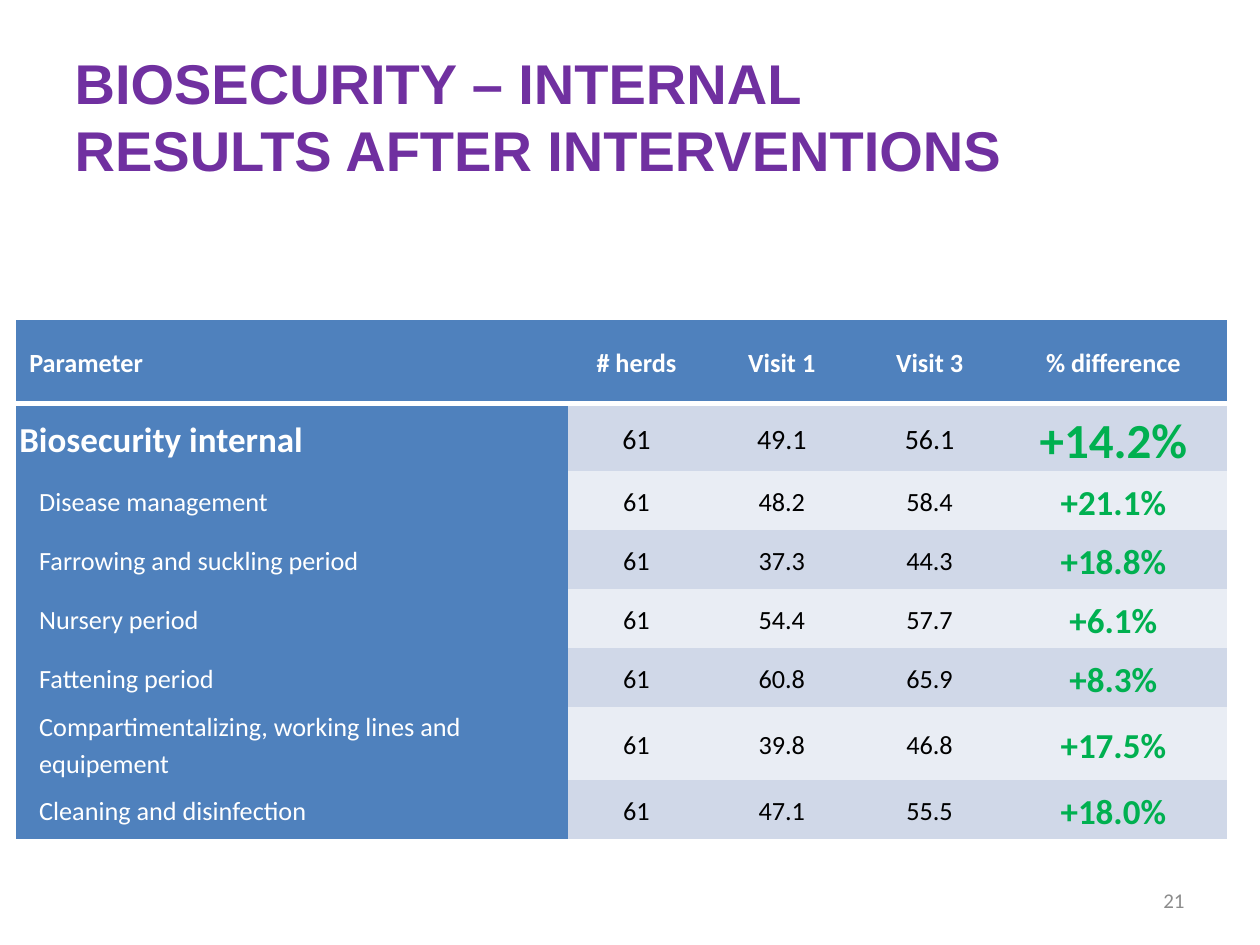
from lxml import etree
from pptx import Presentation
from pptx.dml.color import RGBColor
from pptx.enum.text import MSO_ANCHOR, PP_ALIGN
from pptx.oxml.ns import qn
from pptx.util import Cm, Pt

LEFT, CENTER, RIGHT = PP_ALIGN.LEFT, PP_ALIGN.CENTER, PP_ALIGN.RIGHT
MIDDLE = MSO_ANCHOR.MIDDLE

WHITE = RGBColor(0xFF, 0xFF, 0xFF)
BLACK = RGBColor(0x00, 0x00, 0x00)
GREY = RGBColor(0x8C, 0x8C, 0x8C)
PURPLE = RGBColor(0x70, 0x30, 0xA0)
GREEN = RGBColor(0x00, 0xB0, 0x50)
BLUE = RGBColor(0x4F, 0x81, 0xBD)
BAND_DARK = RGBColor(0xD0, 0xD8, 0xE8)
BAND_LIGHT = RGBColor(0xE9, 0xED, 0xF4)

NO_STYLE_NO_GRID = "{2D5ABB26-0587-4C30-8999-92F81FD0307C}"
TITLE_LAYOUT = 5

TITLE_LINES = ["BIOSECURITY – INTERNAL", "RESULTS AFTER INTERVENTIONS"]
HEADER = ["Parameter", "# herds", "Visit 1", "Visit 3", "% difference"]
TOTAL = ["Biosecurity internal", "61", "49.1", "56.1", "+14.2%"]
DETAILS = [
    ["Disease management", "61", "48.2", "58.4", "+21.1%"],
    ["Farrowing and suckling period", "61", "37.3", "44.3", "+18.8%"],
    ["Nursery period", "61", "54.4", "57.7", "+6.1%"],
    ["Fattening period", "61", "60.8", "65.9", "+8.3%"],
    ["Compartimentalizing, working lines and equipement", "61", "39.8", "46.8", "+17.5%"],
    ["Cleaning and disinfection", "61", "47.1", "55.5", "+18.0%"],
]
TWO_LINE_LABEL = DETAILS[4][0]

COLUMN_WIDTHS = [11.15, 2.74, 3.12, 2.84, 4.57]
HEADER_HEIGHT, ROW_HEIGHT = 1.7, 1.19


def add_run(paragraph, text, size, color, bold=False, font="Calibri"):
    run = paragraph.add_run()
    run.text = text
    run.font.name = font
    run.font.size = Pt(size)
    run.font.bold = bold
    run.font.color.rgb = color


def place(shape, left, top, width, height):
    shape.left, shape.top = Cm(left), Cm(top)
    shape.width, shape.height = Cm(width), Cm(height)


def add_title(slide, left, top, width, height):
    title = slide.shapes.title
    place(title, left, top, width, height)
    frame = title.text_frame
    frame.vertical_anchor = MIDDLE
    for index, line in enumerate(TITLE_LINES):
        paragraph = frame.add_paragraph() if index else frame.paragraphs[0]
        paragraph.alignment = LEFT
        add_run(paragraph, line, 32, PURPLE, bold=True, font="Arial")


def add_border(cell, side, width):
    """Draw a white line on one side: L, T or B, called in that order and before the fill."""
    properties = cell._tc.get_or_add_tcPr()
    line = etree.SubElement(properties, qn(f"a:ln{side}"), w=str(Pt(width)))
    fill = etree.SubElement(line, qn("a:solidFill"))
    etree.SubElement(fill, qn("a:srgbClr"), val=str(WHITE))


def cell_style(row, column):
    """Return text size, colour, bold and left indent in cm for a table position."""
    if row == 0:
        return 15, WHITE, True, 0.0 if column else 0.2
    is_total = row == 1
    if column == 0:
        return (20, WHITE, True, 0.0) if is_total else (15, WHITE, False, 0.4)
    if column == len(HEADER) - 1:
        return 28 if is_total else 20, GREEN, True, 0.0
    return 16 if is_total else 15, BLACK, False, 0.0


def fill_cell(cell, row, column, text):
    cell.margin_left = cell.margin_right = Cm(0.08)
    cell.margin_top = cell.margin_bottom = 0
    cell.vertical_anchor = MIDDLE
    if column == 0:
        add_border(cell, "L", 1)
    if row == 0:
        add_border(cell, "T", 1)
        add_border(cell, "B", 3)
    cell.fill.solid()
    band = BAND_DARK if row % 2 else BAND_LIGHT
    cell.fill.fore_color.rgb = BLUE if row == 0 or column == 0 else band

    size, color, bold, indent = cell_style(row, column)
    paragraph = cell.text_frame.paragraphs[0]
    paragraph.alignment = CENTER if column else LEFT
    paragraph.line_spacing = 1.15
    paragraph.space_before = Pt(0 if text == TWO_LINE_LABEL else 10)
    paragraph._p.get_or_add_pPr().set("marL", str(Cm(indent)))
    add_run(paragraph, text, size, color, bold)


def add_results_table(slide, left, top):
    rows = [HEADER, TOTAL, *DETAILS]
    heights = [HEADER_HEIGHT] + [ROW_HEIGHT] * (len(rows) - 1)
    frame = slide.shapes.add_table(
        len(rows), len(HEADER), Cm(left), Cm(top),
        Cm(sum(COLUMN_WIDTHS)), Cm(sum(heights)))
    table = frame.table
    table._tbl.tblPr.find(qn("a:tableStyleId")).text = NO_STYLE_NO_GRID
    for column, width in zip(table.columns, COLUMN_WIDTHS):
        column.width = Cm(width)
    for row, height in zip(table.rows, heights):
        row.height = Cm(height)
    for row, texts in enumerate(rows):
        for column, text in enumerate(texts):
            fill_cell(table.cell(row, column), row, column, text)


def add_page_number(slide, left, top, width, height):
    box = slide.shapes.add_textbox(Cm(left), Cm(top), Cm(width), Cm(height))
    box.text_frame.word_wrap = True
    box.text_frame.vertical_anchor = MIDDLE
    paragraph = box.text_frame.paragraphs[0]
    paragraph.alignment = RIGHT
    add_run(paragraph, "21", 12, GREY)


def main():
    presentation = Presentation()
    presentation.slide_width, presentation.slide_height = Cm(25.4), Cm(19.05)
    slide = presentation.slides.add_slide(presentation.slide_layouts[TITLE_LAYOUT])
    add_page_number(slide, 18.2, 17.65, 5.93, 1.01)
    add_results_table(slide, 0.31, 6.43)
    add_title(slide, 1.25, 0.75, 22.86, 3.15)
    presentation.save("out.pptx")


if __name__ == "__main__":
    main()
